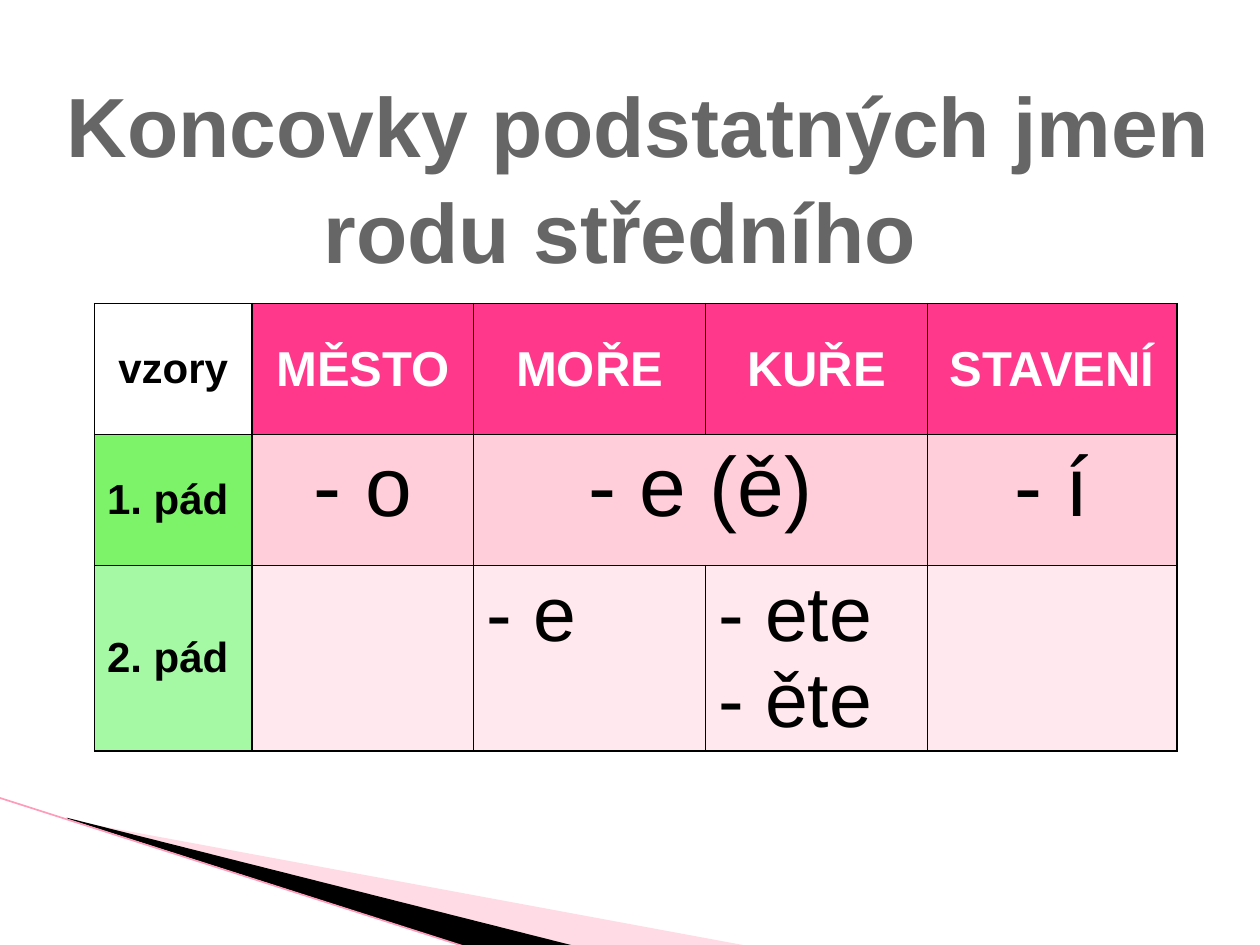
from lxml import etree
from pptx import Presentation
from pptx.dml.color import RGBColor
from pptx.enum import shapes, text
from pptx.oxml.ns import qn
from pptx.util import Inches, Pt

BLACK, WHITE, GREY = "000000", "FFFFFF", "666666"
PINK, ROSE, BLUSH = "FF388C", "FFCEDA", "FFE8EE"
FONT = "Arial"
LEFT, CENTER = text.PP_ALIGN.LEFT, text.PP_ALIGN.CENTER
TOP, MIDDLE = text.MSO_ANCHOR.TOP, text.MSO_ANCHOR.MIDDLE


def rgb(value):
    return RGBColor.from_string(value)


def format_paragraph(p, size, color, bold, align):
    p.alignment = align
    for r in p.runs:
        r.font.name = FONT
        r.font.size = Pt(size)
        r.font.bold = bold
        r.font.color.rgb = rgb(color)


def add_wedge(s, points, color, alpha=None):
    """Filled outline through points in inches; alpha is opacity in percent."""
    start, *rest = [(Inches(x), Inches(y)) for x, y in points]
    builder = s.shapes.build_freeform(*start)
    builder.add_line_segments(rest, close=True)
    sp = builder.convert_to_shape()
    sp.shadow.inherit = False
    sp.fill.solid()
    sp.fill.fore_color.rgb = rgb(color)
    sp.line.fill.background()
    if alpha is not None:
        clr = sp.fill._xPr.find(".//" + qn("a:srgbClr"))
        etree.SubElement(clr, qn("a:alpha")).set("val", str(alpha * 1000))


def add_line(s, x1, y1, x2, y2, color, width):
    line = s.shapes.add_connector(shapes.MSO_CONNECTOR.STRAIGHT,
                                  Inches(x1), Inches(y1), Inches(x2), Inches(y2))
    line.line.color.rgb = rgb(color)
    line.line.width = Pt(width)
    etree.SubElement(line._element.spPr, qn("a:effectLst"))


def set_title(s, lines, second_indent):
    sp = s.shapes.title
    sp.left, sp.top, sp.width, sp.height = map(Inches, (0.43, 0.76, 9.8, 1.25))
    tf = sp.text_frame
    tf.text = "\n".join(lines)
    tf.word_wrap = True
    tf.auto_size = text.MSO_AUTO_SIZE.NONE
    tf.vertical_anchor = MIDDLE
    for p in tf.paragraphs:
        format_paragraph(p, 48, GREY, True, LEFT)
        p.line_spacing = 1.05
        p.space_before = Pt(0)
    tf.paragraphs[1]._p.get_or_add_pPr().set("marL", str(Inches(second_indent)))


def set_borders(cell, color, width):
    tcPr = cell._tc.get_or_add_tcPr()
    for position, side in enumerate(("lnL", "lnR", "lnT", "lnB")):
        ln = etree.Element(qn("a:" + side), w=str(Pt(width)))
        fill = etree.SubElement(ln, qn("a:solidFill"))
        etree.SubElement(fill, qn("a:srgbClr"), val=color)
        tcPr.insert(position, ln)


def fill_cell(cell, words, fill, size=18, color=BLACK, bold=False,
              align=LEFT, anchor=TOP):
    cell.fill.solid()
    cell.fill.fore_color.rgb = rgb(fill)
    set_borders(cell, BLACK, 1)
    cell.vertical_anchor = anchor
    cell.text_frame.text = words
    for p in cell.text_frame.paragraphs:
        format_paragraph(p, size, color, bold, align)


def add_endings_table(s):
    widths, heights = (1.25, 1.76, 1.84, 1.76, 1.98), (1.04, 1.04, 1.47)
    table = s.shapes.add_table(len(heights), len(widths), Inches(0.75), Inches(2.41),
                               Inches(sum(widths)), Inches(sum(heights))).table
    for column, width in zip(table.columns, widths):
        column.width = Inches(width)
    for row, height in zip(table.rows, heights):
        row.height = Inches(height)
    table.cell(1, 2).merge(table.cell(1, 3))

    labels = (("vzory", WHITE, CENTER), ("1. pád", "7DF369", LEFT),
              ("2. pád", "A5F9A5", LEFT))
    for i, (words, fill, align) in enumerate(labels):
        fill_cell(table.cell(i, 0), words, fill, 24, BLACK, True, align, MIDDLE)

    patterns = ("MĚSTO", "MOŘE", "KUŘE", "STAVENÍ")
    first_case = ("- o", "- e (ě)", "", "- í")
    second_case = ("", "- e", "- ete\n- ěte", "")
    for j, (pattern, first, second) in enumerate(
            zip(patterns, first_case, second_case), start=1):
        fill_cell(table.cell(0, j), pattern, PINK, 28, WHITE, True, CENTER, MIDDLE)
        fill_cell(table.cell(1, j), first, ROSE, 48, align=CENTER)
        fill_cell(table.cell(2, j), second, BLUSH, 44)


def main():
    prs = Presentation()
    prs.slide_width, prs.slide_height = Inches(10), Inches(7.5)
    s = prs.slides.add_slide(prs.slide_layouts[5])
    add_wedge(s, [(0.55, 6.51), (5.95, 7.51), (4.56, 7.51), (0.55, 6.5)], "FFA5BF", 40)
    add_wedge(s, [(0.53, 6.49), (4.57, 7.51), (3.72, 7.52), (0.54, 6.5)], BLACK)
    add_line(s, -0.01, 6.33, 3.71, 7.52, "FF9CB9", 0.95)
    set_title(s, ("Koncovky podstatných jmen", "rodu středního"), 2.04)
    add_endings_table(s)
    prs.save("out.pptx")


if __name__ == "__main__":
    main()
